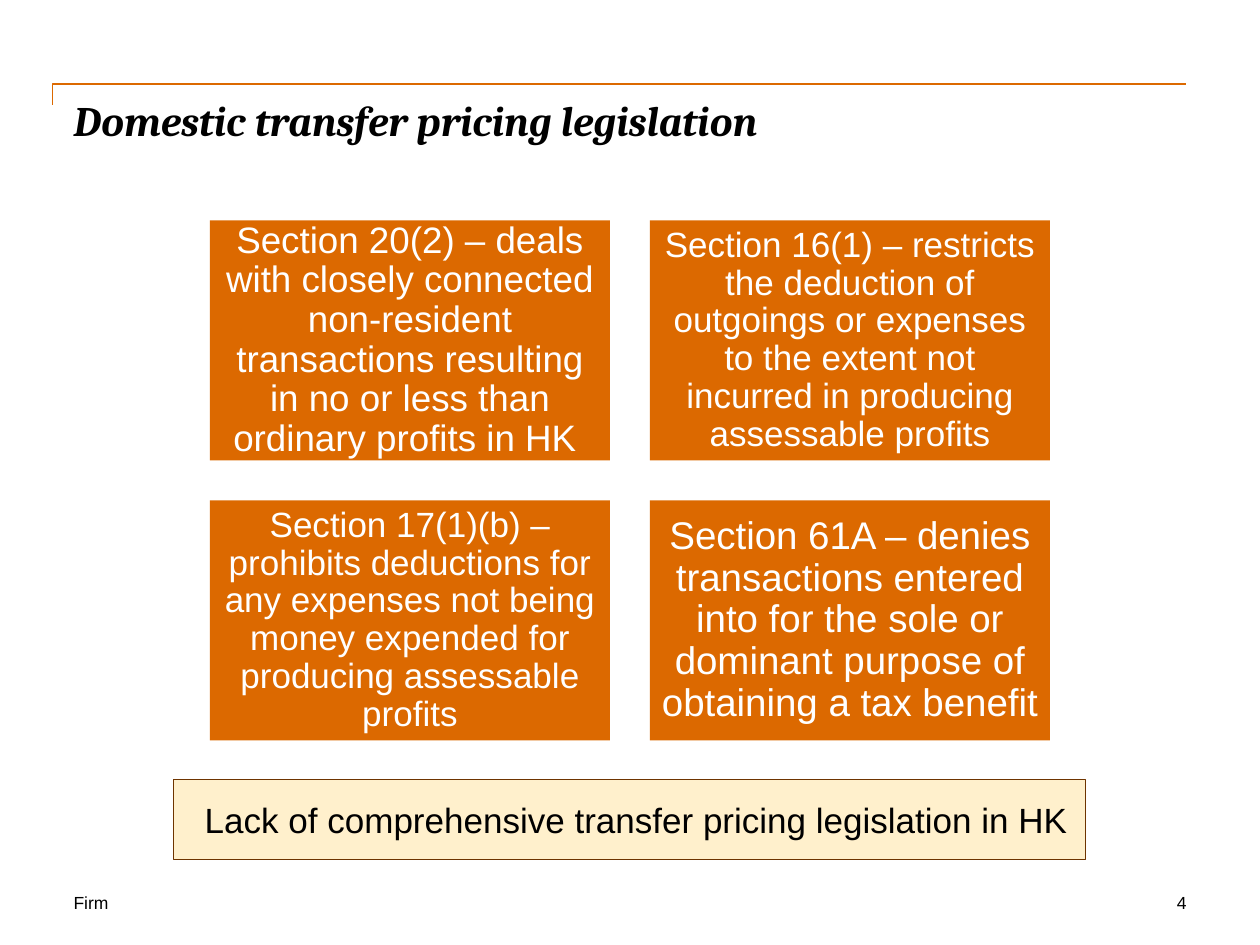
from pptx import Presentation
from pptx.dml.color import RGBColor
from pptx.enum.shapes import MSO_SHAPE as Shape
from pptx.enum.text import MSO_ANCHOR as Anchor, PP_ALIGN as Align
from pptx.util import Pt

ORANGE = RGBColor(0xDC, 0x69, 0x00)
CREAM = RGBColor(0xFF, 0xF0, 0xCC)
BROWN = RGBColor(0x6E, 0x34, 0x00)
BLACK = RGBColor(0, 0, 0)
WHITE = RGBColor(0xFF, 0xFF, 0xFF)

CARD_LEFT, CARD_TOP = 120, 126
CARD_WIDTH, CARD_HEIGHT = 228.57, 137.14
CARD_GAP = 22.86

SECTIONS = [
    ("Section 20(2) – deals with closely connected non-resident transactions "
     "resulting in no or less than ordinary profits in HK ", 21),
    ("Section 16(1) – restricts the deduction of outgoings or expenses to the "
     "extent not incurred in producing assessable profits", 20),
    ("Section 17(1)(b) – prohibits deductions for any expenses not being money "
     "expended for producing assessable profits", 20),
    ("Section 61A – denies transactions entered into for the sole or dominant "
     "purpose of obtaining a tax benefit", 22),
]


def write(frame, text, *, size, font="Arial", color=BLACK, bold=False, italic=False,
          align=Align.LEFT, anchor=Anchor.TOP, insets=(0, 0, 0, 0), spacing=None):
    """Fill a text frame; insets run left, top, right, bottom."""
    frame.word_wrap = True
    frame.vertical_anchor = anchor
    (frame.margin_left, frame.margin_top,
     frame.margin_right, frame.margin_bottom) = map(Pt, insets)
    para = frame.paragraphs[0]
    para.alignment = align
    para.line_spacing = spacing
    span = para.add_run()
    span.text = text
    span.font.name = font
    span.font.size = Pt(size)
    span.font.bold = bold
    span.font.italic = italic
    span.font.color.rgb = color


class Painter:
    def __init__(self, page):
        self.page = page
        self.accent = ORANGE

    def label(self, text, left, top, width, height, **style):
        box = self.page.shapes.add_textbox(Pt(left), Pt(top), Pt(width), Pt(height))
        write(box.text_frame, text, **style)

    def panel(self, text, left, top, width, height, fill, border=None, **style):
        box = self.page.shapes.add_shape(
            Shape.RECTANGLE, Pt(left), Pt(top), Pt(width), Pt(height))
        box.shadow.inherit = False
        box.fill.solid()
        box.fill.fore_color.rgb = fill
        if border is None:
            box.line.fill.background()
        else:
            box.line.color.rgb = border
            box.line.width = Pt(0.25)
        write(box.text_frame, text, align=Align.CENTER, anchor=Anchor.MIDDLE, **style)

    def card(self, text, left, top, size):
        self.panel(text, left, top, CARD_WIDTH, CARD_HEIGHT, self.accent,
                   size=size, color=WHITE, spacing=0.9, insets=(6, 6, 6, 6))

    def rule(self, start, *corners):
        """Draw an open line through the given points."""
        builder = self.page.shapes.build_freeform(*map(Pt, start))
        builder.add_line_segments(
            [(Pt(x), Pt(y)) for x, y in corners], close=False)
        line = builder.convert_to_shape()
        line.shadow.inherit = False
        line.fill.background()
        line.line.color.rgb = self.accent
        line.line.width = Pt(1)


def main():
    deck = Presentation()
    deck.slide_width, deck.slide_height = Pt(720), Pt(540)
    painter = Painter(deck.slides.add_slide(deck.slide_layouts[6]))

    painter.rule((30, 60), (30, 48), (678, 48))
    painter.label("Domestic transfer pricing legislation", 42, 54, 636, 40,
                  size=24, font="Cambria", bold=True, italic=True)

    for index, (text, size) in enumerate(SECTIONS):
        row, column = divmod(index, 2)
        painter.card(text, CARD_LEFT + column * (CARD_WIDTH + CARD_GAP),
                     CARD_TOP + row * (CARD_HEIGHT + CARD_GAP), size)

    painter.panel("Lack of comprehensive transfer pricing legislation in HK",
                  99.2, 445.2, 521, 46, CREAM, BROWN,
                  size=20, insets=(14, 3.6, 6, 3.6))

    painter.label("Firm", 42, 510, 204, 12, size=10)
    painter.label("4", 558, 510, 120, 12, size=10, align=Align.RIGHT)
    deck.save("out.pptx")


if __name__ == "__main__":
    main()
